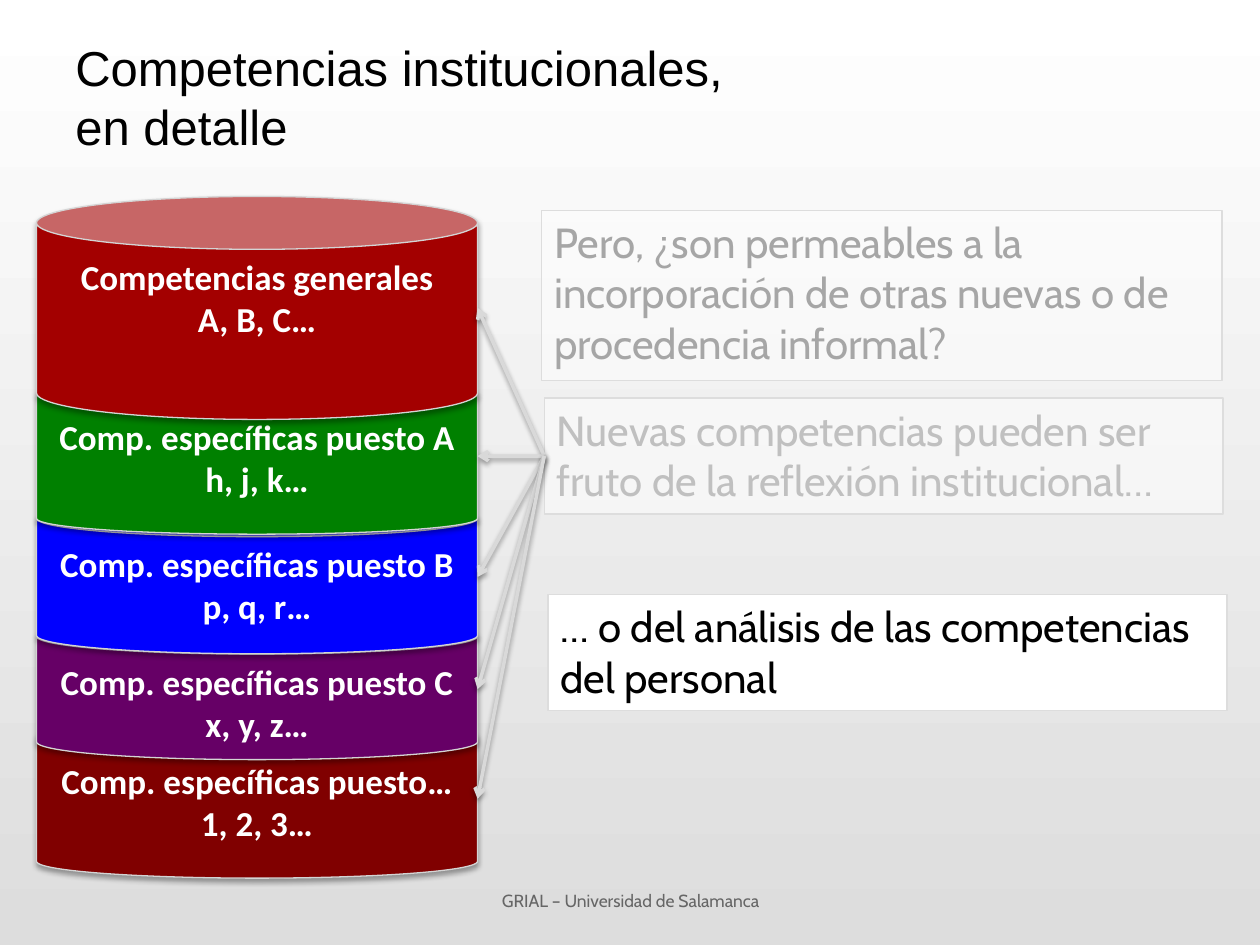
from lxml import etree
from pptx import Presentation
from pptx import util as u
from pptx.dml import color
from pptx.enum import shapes, text
from pptx.oxml import ns

CAN_LEFT, CAN_WIDTH = 20.9, 252
CANS = [
    (411.1, 90.7, 0.211, "800000", "Comp. específicas puesto…", "1, 2, 3…"),
    (353.5, 80.6, 0.252, "660066", "Comp. específicas puesto C", "x, y, z…"),
    (285.8, 87.8, 0.238, "0000FF", "Comp. específicas puesto B", "p, q, r…"),
    (216, 89.3, 0.202, "008000", "Comp. específicas puesto A", "h, j, k…"),
    (112.3, 127.4, 0.237, "A30000", "Competencias generales", "A, B, C…"),
]


def rgb(value):
    """Turn a hex string into a colour."""
    return color.RGBColor.from_string(value)


def child(parent, tag, **attrs):
    """Append a DrawingML element with the given attributes."""
    el = etree.SubElement(parent, ns.qn(tag))
    for name, value in attrs.items():
        el.set(name, str(value))
    return el


def add_shadow(sp, alpha, distance):
    """Give a shape or connector a soft shadow straight below it."""
    spPr = sp._element.spPr
    effects = child(spPr, "a:effectLst")
    outer = child(effects, "a:outerShdw", blurRad=int(u.Pt(3.1)),
                  dist=int(u.Pt(distance)), dir=5400000, rotWithShape=0)
    child(child(outer, "a:srgbClr", val="000000"), "a:alpha", val=alpha * 1000)


def set_outline(sp, value, width):
    """Set the colour and width of a line."""
    sp.line.color.rgb = rgb(value)
    sp.line.width = u.Pt(width)


def write(sp, lines, value, align, anchor, **fmt):
    """Write one paragraph per line with the same format."""
    tf = sp.text_frame
    tf.word_wrap = True
    tf.vertical_anchor = anchor
    for i, line in enumerate(lines):
        p = tf.add_paragraph() if i else tf.paragraphs[0]
        p.text = line
        p.alignment = align
        for r in p.runs:
            r.font.color.rgb = rgb(value)
            for name, setting in fmt.items():
                setattr(r.font, name, setting)


def add_label(s, box, content, value, align, **fmt):
    """Add a text box centred vertically."""
    sp = s.shapes.add_textbox(*map(u.Pt, box))
    write(sp, [content], value, align, text.MSO_ANCHOR.MIDDLE, **fmt)


def add_solid(s, kind, box, fill, outline):
    """Add a filled preset shape with a thin outline."""
    sp = s.shapes.add_shape(kind, *map(u.Pt, box))
    sp.fill.solid()
    sp.fill.fore_color.rgb = rgb(fill)
    set_outline(sp, outline, 0.75)
    return sp


def add_note(s, box, content, value, alpha=None):
    """Add a white note, optionally translucent."""
    sp = add_solid(s, shapes.MSO_SHAPE.RECTANGLE, box, "FFFFFF", "DDDDDD")
    sp.shadow.inherit = False
    if alpha:
        clr = sp._element.spPr.find(ns.qn("a:solidFill"))[0]
        child(clr, "a:alpha", val=alpha * 1000)
    write(sp, [content], value, text.PP_ALIGN.LEFT, text.MSO_ANCHOR.TOP,
          size=u.Pt(24), name="Cabin")
    return sp


def add_can(s, top, height, adj, fill, *lines):
    """Add one layer of the competence cylinder."""
    box = (CAN_LEFT, top, CAN_WIDTH, height)
    sp = add_solid(s, shapes.MSO_SHAPE.CAN, box, fill, "D4D4D4")
    sp.adjustments[0] = adj
    add_shadow(sp, 35, 1.8)
    write(sp, lines, "FFFFFF", text.PP_ALIGN.CENTER, text.MSO_ANCHOR.TOP,
          size=u.Pt(20), name="Calibri", bold=True)
    return sp


def add_arrow(s, note, can):
    """Draw an arrow from the left of a note to the right of a can."""
    cx = s.shapes.add_connector(
        shapes.MSO_CONNECTOR.STRAIGHT, note.left, note.top + note.height // 2,
        can.left + can.width, can.top + can.height // 2)
    cx.begin_connect(note, 1)
    set_outline(cx, "D9D9D9", 2)
    child(cx._element.spPr.find(ns.qn("a:ln")), "a:tailEnd", type="arrow")
    add_shadow(cx, 38, 1.6)


def set_background(s):
    """Shade the slide from white down to light grey."""
    fill = s.background.fill
    fill.gradient()
    fill.gradient_angle = 270
    for stop, position, value in zip(fill.gradient_stops, (0, 1), ("FFFFFF", "DDDDDD")):
        stop.color.rgb = rgb(value)
        stop.position = position


def main():
    """Build the slide and save it."""
    prs = Presentation()
    prs.slide_width, prs.slide_height = u.Pt(720), u.Pt(540)
    s = prs.slides.add_slide(prs.slide_layouts[6])
    set_background(s)
    add_label(s, (36, 10.1, 463, 90), "Competencias institucionales,\ven detalle",
              "000000", text.PP_ALIGN.LEFT, size=u.Pt(28), name="Arial")
    add_label(s, (246.2, 500.4, 228.2, 28.8), "GRIAL – Universidad de Salamanca",
              "666666", text.PP_ALIGN.CENTER, size=u.Pt(10), name="Cabin")
    add_note(s, (309.6, 120.2, 388.8, 97.2),
             "Pero, ¿son permeables a la incorporación de otras nuevas o de "
             "procedencia informal?", "A6A6A6", 49)
    source = add_note(s, (311, 227.5, 388, 66.2),
                      "Nuevas competencias pueden ser fruto de la reflexión "
                      "institucional…", "C0C0C0", 49)
    cans = [add_can(s, *can) for can in CANS]
    for can in reversed(cans):
        add_arrow(s, source, can)
    add_note(s, (313.2, 339.8, 388, 66.2),
             "… o del análisis de las competencias del personal", "000000")
    prs.save("out.pptx")


if __name__ == "__main__":
    main()
